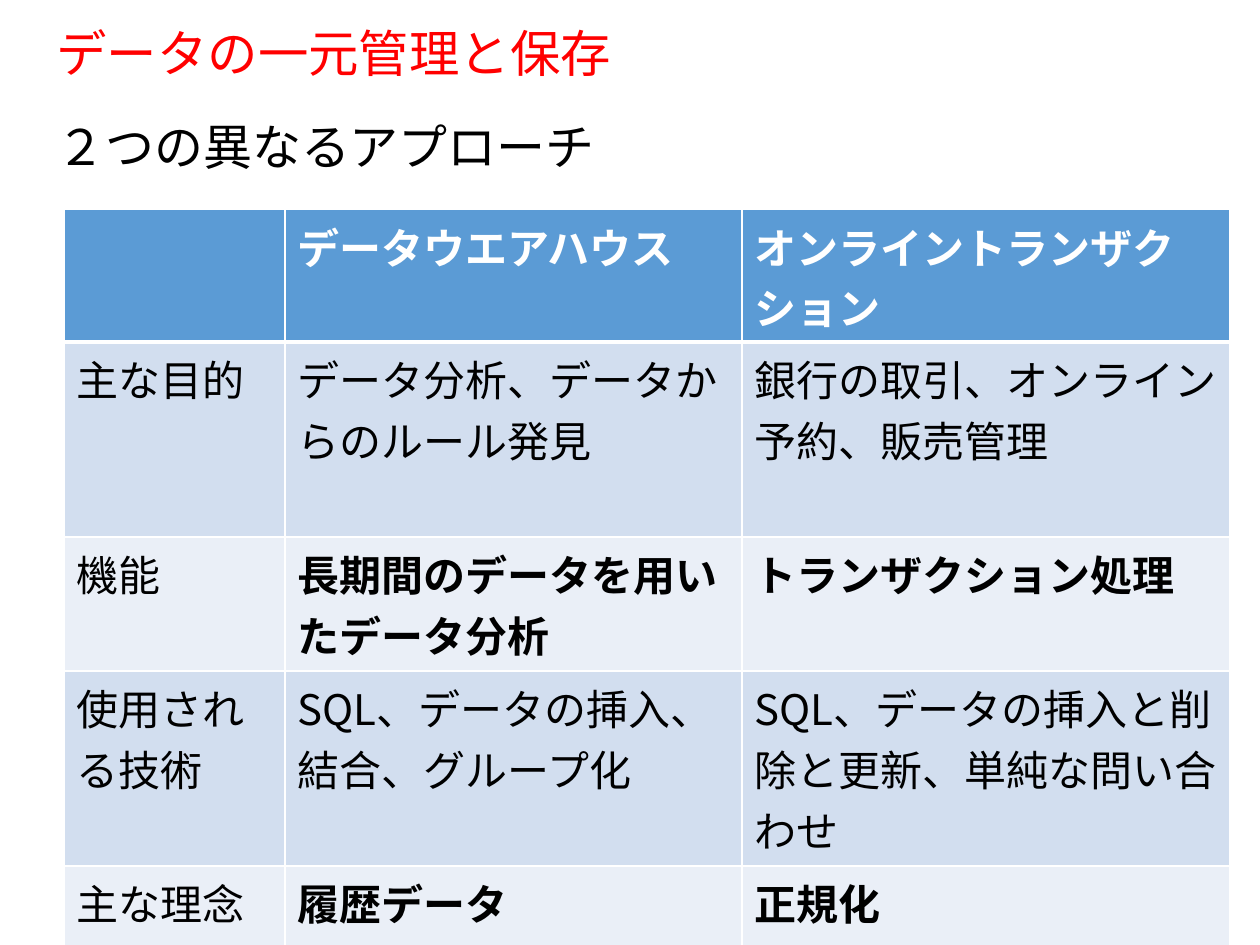
import pptx
import pptx.util
import pptx.dml.color
import pptx.enum.text
import lxml.etree

COLORS = {"title": "FF0000", "text": "000000", "white": "FFFFFF",
          "header": "5B9BD5", "odd": "D2DEEF", "even": "EAEFF7"}
COLUMNS = [221, 457, 488]
ROW_HEIGHTS = [133, 195, 134, 195, 131]
ROWS = [
    ["", "データウエアハウス", "オンライントランザクション"],
    ["主な目的", "データ分析、データからのルール発見", "銀行の取引、オンライン予約、販売管理"],
    ["機能", "長期間のデータを用いたデータ分析", "トランザクション処理"],
    ["使用される技術", "SQL、データの挿入、結合、グループ化",
     "SQL、データの挿入と削除と更新、単純な問い合わせ"],
    ["主な理念", "履歴データ", "正規化"],
]


def px(n):
    return pptx.util.Emu(n * 914400 // 126)


def rgb(name):
    return pptx.dml.color.RGBColor.from_string(COLORS[name])


def write(tf, text, font="Arial", size=24, color="text", bold=False, line=None, before=None):
    p = tf.paragraphs[0]
    p.line_spacing = line
    if before is not None:
        p.space_before = pptx.util.Pt(before)
    r = p.add_run()
    r.text = text
    r.font.name = font
    r.font.size = pptx.util.Pt(size)
    r.font.bold = bold
    r.font.color.rgb = rgb(color)


class Deck:
    """Holds the slide style and the current slide."""

    def __init__(self):
        self.prs = pptx.Presentation()
        self.prs.slide_width = px(1260)
        self.prs.slide_height = px(945)
        self.s = self.prs.slides.add_slide(self.prs.slide_layouts[6])

    def text(self, x, y, w, h, text, anchor="TOP", **fmt):
        tf = self.s.shapes.add_textbox(px(x), px(y), px(w), px(h)).text_frame
        tf.word_wrap = True
        tf.vertical_anchor = getattr(pptx.enum.text.MSO_ANCHOR, anchor)
        write(tf, text, **fmt)

    def border(self, cell, side, width):
        tc_pr = cell._tc.get_or_add_tcPr()
        ns = pptx.oxml.ns.qn
        ln = lxml.etree.SubElement(tc_pr, ns("a:ln" + side), w=str(pptx.util.Pt(width)))
        fill = lxml.etree.SubElement(ln, ns("a:solidFill"))
        lxml.etree.SubElement(fill, ns("a:srgbClr"), val=COLORS["white"])

    def table(self, x, y, columns, heights, rows):
        table = self.s.shapes.add_table(len(rows), len(columns), px(x), px(y),
                                        px(sum(columns)), px(sum(heights))).table
        for column, width in zip(table.columns, columns):
            column.width = px(width)
        for i, (row, height) in enumerate(zip(rows, heights)):
            table.rows[i].height = px(height)
            header = i == 0
            fill = "header" if header else "odd" if i % 2 else "even"
            for j, text in enumerate(row):
                cell = table.cell(i, j)
                for side in "LRTB":
                    thick = (header and side == "B") or (i == 1 and side == "T")
                    self.border(cell, side, 3 if thick else 1)
                cell.fill.solid()
                cell.fill.fore_color.rgb = rgb(fill)
                if text:
                    write(cell.text_frame, text, font="Noto Sans CJK JP",
                          color="white" if header else "text",
                          bold=header or (i % 2 == 0 and j > 0))


def main():
    deck = Deck()
    deck.text(44, 24, 1166, 64, "データの一元管理と保存", anchor="MIDDLE",
              size=28.8, color="title", line=0.9)
    deck.text(44, 117, 1166, 82, "２つの異なるアプローチ", size=28, line=0.9, before=10)
    deck.table(64, 209, COLUMNS, ROW_HEIGHTS, ROWS)
    deck.prs.save("out.pptx")


if __name__ == "__main__":
    main()
